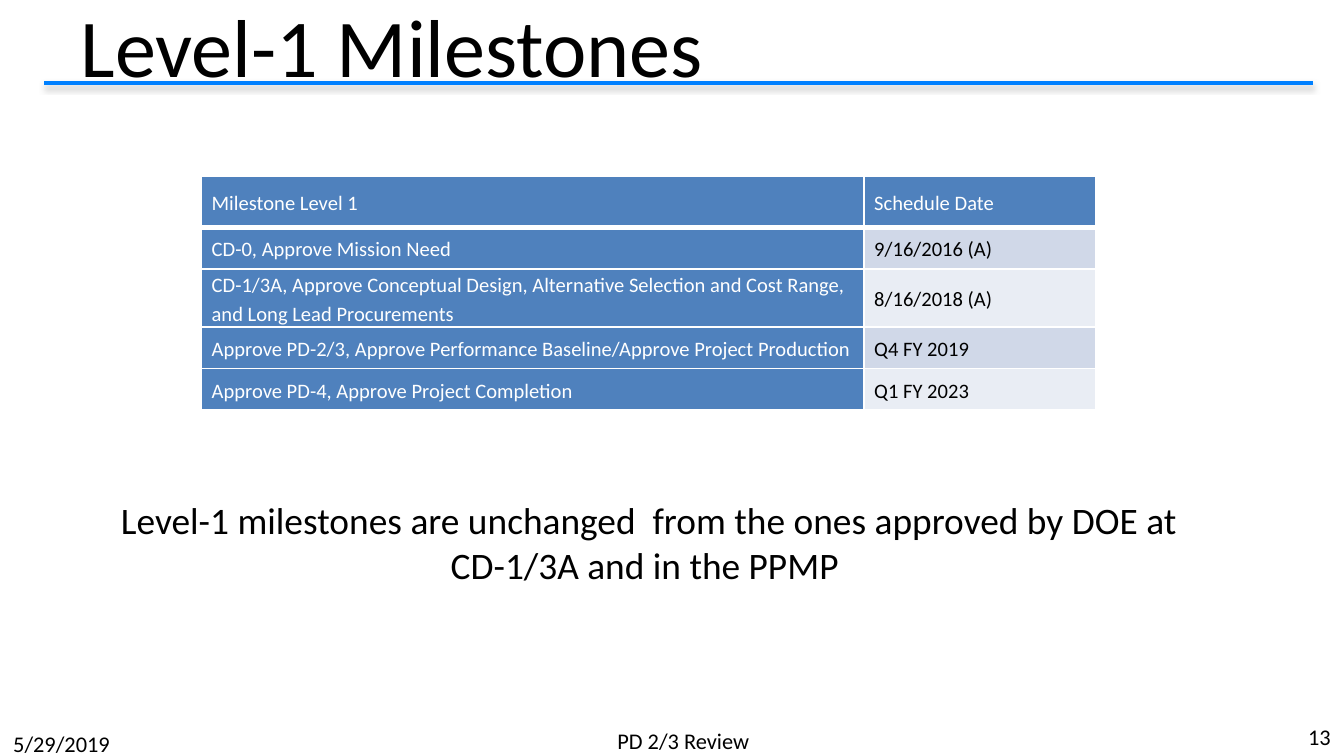
from typing import NamedTuple

from lxml import etree
from pptx import Presentation, util as u
from pptx.dml.color import RGBColor
from pptx.enum import shapes, text
from pptx.oxml import parse_xml
from pptx.oxml.ns import qn

BLACK = RGBColor(0, 0, 0)
WHITE = RGBColor(255, 255, 255)
LINE = RGBColor(0x00, 0x80, 0xFF)
HEAD = RGBColor(0x4F, 0x81, 0xBD)
BANDS = RGBColor(0xD0, 0xD8, 0xE8), RGBColor(0xE9, 0xED, 0xF4)
FONT = "Calibri"
LEFT, MID, RIGHT = text.PP_ALIGN.LEFT, text.PP_ALIGN.CENTER, text.PP_ALIGN.RIGHT
CENTER = text.MSO_ANCHOR.MIDDLE
TOP = text.MSO_ANCHOR.TOP
WIDTH = u.Inches(10)
HEIGHT = WIDTH * 9 // 16
NS = "http://schemas.openxmlformats.org/drawingml/2006/main"
SHADOW = f"""<a:effectLst xmlns:a="{NS}">
<a:outerShdw blurRad="39370" dist="20320" dir="5400000" rotWithShape="0">
<a:srgbClr val="808080"><a:alpha val="38000"/></a:srgbClr>
</a:outerShdw></a:effectLst>"""


class Box(NamedTuple):
    x: float
    y: float
    w: float
    h: float


class Note(NamedTuple):
    words: str
    box: Box
    size: int
    align: text.PP_ALIGN
    anchor: text.MSO_ANCHOR = CENTER


class Goal(NamedTuple):
    name: str
    date: str
    high: float


TITLE = Note("Level-1 Milestones", Box(0.5, 0.03, 9, 0.6), 44, LEFT)
NOTES = [
    Note("5/29/2019", Box(0, 5.44, 2.33, 0.19), 12, LEFT),
    Note("PD 2/3 Review", Box(3.5, 5.39, 3.17, 0.24), 12, MID),
    Note("13", Box(9.42, 5.33, 0.58, 0.3), 12, RIGHT),
    Note("Level-1 milestones are unchanged  from the ones approved by DOE at "
         "CD-1/3A and in the PPMP ", Box(0.58, 3.65, 8.5, 0.77), 20, MID, TOP),
]
GOALS = [
    Goal("Milestone Level 1", "Schedule Date", 0.38),
    Goal("CD-0, Approve Mission Need", "9/16/2016 (A)", 0.31),
    Goal("CD-1/3A, Approve Conceptual Design, Alternative Selection and Cost "
         "Range, and Long Lead Procurements", "8/16/2018 (A)", 0.36),
    Goal("Approve PD-2/3, Approve Performance Baseline/Approve Project Production",
         "Q4 FY 2019", 0.31),
    Goal("Approve PD-4, Approve Project Completion", "Q1 FY 2023", 0.31),
]
COLS = 4.93, 1.72


def style(para, size: int, color: RGBColor) -> None:
    para.font.name = FONT
    para.font.size = u.Pt(size)
    para.font.color.rgb = color


def write(shape, note: Note) -> None:
    shape.left, shape.top, shape.width, shape.height = map(u.Inches, note.box)
    frame = shape.text_frame
    frame.text = note.words
    frame.word_wrap = True
    frame.auto_size = text.MSO_AUTO_SIZE.NONE
    frame.vertical_anchor = note.anchor
    para = frame.paragraphs[0]
    para.alignment = note.align
    style(para, note.size, BLACK)


def rule(slide) -> None:
    y = u.Inches(0.62)
    line = slide.shapes.add_connector(
        shapes.MSO_CONNECTOR.STRAIGHT, u.Inches(0.33), y, u.Inches(9.77), y)
    line.line.color.rgb = LINE
    line.line.width = u.Pt(2.25)
    line._element.spPr.append(parse_xml(SHADOW))
    slide.shapes._spTree.insert(2, line._element)


def edge(cell, low: float) -> None:
    props = cell._tc.get_or_add_tcPr()
    sides = {"lnL": 1, "lnR": 1, "lnT": 1, "lnB": low}
    for spot, (side, wide) in enumerate(sides.items()):
        line = etree.Element(qn(f"a:{side}"), w=str(u.Pt(wide)))
        fill = etree.SubElement(line, qn("a:solidFill"))
        etree.SubElement(fill, qn("a:srgbClr"), val=str(WHITE))
        props.insert(spot, line)


def fill_cell(cell, words: str, row: int, col: int) -> None:
    dark = row == 0 or col == 0
    cell.text = words
    cell.vertical_anchor = CENTER
    cell.margin_left = cell.margin_right = u.Pt(5.4)
    cell.margin_top = cell.margin_bottom = 0
    cell.fill.solid()
    cell.fill.fore_color.rgb = HEAD if dark else BANDS[(row - 1) % 2]
    para = cell.text_frame.paragraphs[0]
    para.line_spacing = 1.15
    style(para, 11, WHITE if dark else BLACK)
    edge(cell, 3 if row == 0 else 1)


def grid(slide) -> None:
    high = sum(goal.high for goal in GOALS)
    table = slide.shapes.add_table(
        len(GOALS), len(COLS), u.Inches(1.5), u.Inches(1.31),
        u.Inches(sum(COLS)), u.Inches(high)).table
    for col, wide in zip(table.columns, COLS):
        col.width = u.Inches(wide)
    for row, goal in enumerate(GOALS):
        table.rows[row].height = u.Inches(goal.high)
        for col, words in enumerate((goal.name, goal.date)):
            fill_cell(table.cell(row, col), words, row, col)


def main() -> None:
    deck = Presentation()
    deck.slide_width, deck.slide_height = WIDTH, HEIGHT
    slide = deck.slides.add_slide(deck.slide_layouts[5])
    rule(slide)
    write(slide.shapes.title, TITLE)
    grid(slide)
    for note in NOTES:
        write(slide.shapes.add_textbox(*map(u.Inches, note.box)), note)
    deck.save("out.pptx")


if __name__ == "__main__":
    main()
